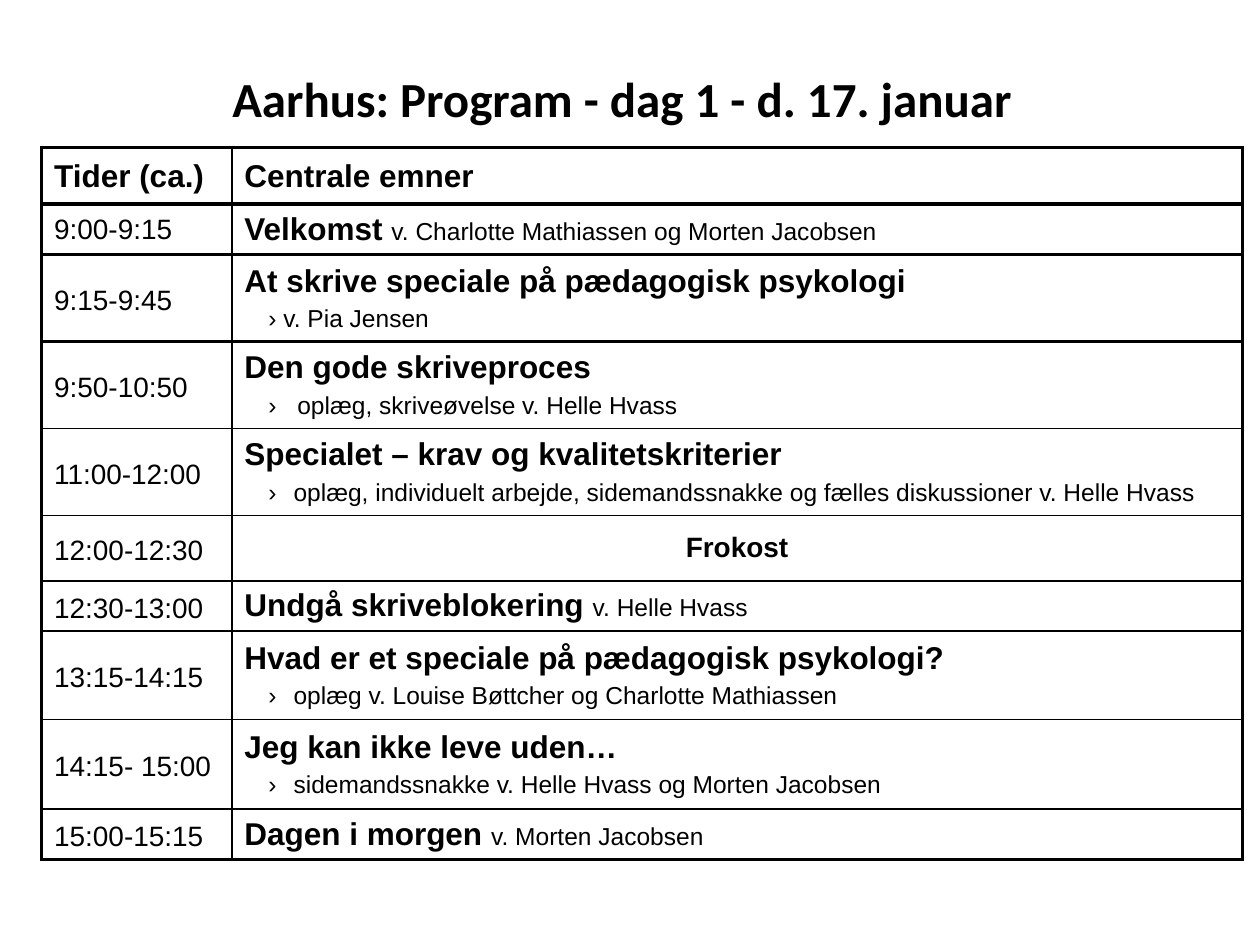
from dataclasses import dataclass

from lxml.etree import SubElement
from pptx import Presentation
from pptx.dml.color import RGBColor
from pptx.enum.text import MSO_ANCHOR, PP_ALIGN
from pptx.oxml.ns import qn
from pptx.util import Inches, Pt


@dataclass(frozen=True)
class Theme:
    ink: str = "000000"
    title_font: str = "Calibri"
    body_font: str = "Arial"
    title: int = 28
    topic: int = 18
    time: int = 16
    detail: int = 14
    thin: float = 1
    thick: float = 2.25
    time_leading: int = 21


@dataclass(frozen=True)
class Session:
    time: str
    topic: str
    height: float
    speaker: str = ""
    bullet: str = ""
    hang: float = 0.2


THEME = Theme()
BULLET_LEFT = 0.19
COLUMN_WIDTHS = (1.51, 8.02)
THICK_LINES = (0, 1, 2, 3, 10)  # horizontal rules, counted from the top
HEADER = Session("Tider (ca.)", "Centrale emner", 0.45)
SESSIONS = (
    Session("9:00-9:15", "Velkomst ", 0.4,
            speaker="v. Charlotte Mathiassen og Morten Jacobsen"),
    Session("9:15-9:45", "At skrive speciale på pædagogisk psykologi", 0.69,
            bullet="v. Pia Jensen", hang=0.12),
    Session("9:50-10:50", "Den gode skriveproces", 0.69,
            bullet="oplæg, skriveøvelse v. Helle Hvass", hang=0.23),
    Session("11:00-12:00", "Specialet – krav og kvalitetskriterier", 0.69,
            bullet="oplæg, individuelt arbejde, sidemandssnakke og fælles "
                   "diskussioner v. Helle Hvass"),
    Session("12:00-12:30", "Frokost", 0.52),
    Session("12:30-13:00", "Undgå skriveblokering ", 0.4, speaker="v. Helle Hvass"),
    Session("13:15-14:15", "Hvad er et speciale på pædagogisk psykologi?", 0.7,
            bullet="oplæg v. Louise Bøttcher og Charlotte Mathiassen"),
    Session("14:15- 15:00", "Jeg kan ikke leve uden…", 0.71,
            bullet="sidemandssnakke v. Helle Hvass og Morten Jacobsen"),
    Session("15:00-15:15", "Dagen i morgen ", 0.4, speaker="v. Morten Jacobsen"),
)


def set_values(target, values):
    for name, value in values.items():
        setattr(target, name, value)


def add_run(paragraph, text, size, bold=False, name=THEME.body_font):
    run = paragraph.add_run()
    run.text = text
    set_values(run.font, {"size": Pt(size), "bold": bold, "name": name})
    run.font.color.rgb = RGBColor.from_string(THEME.ink)


def add_bullet(paragraph, hang):
    properties = paragraph._p.get_or_add_pPr()
    properties.set("marL", str(Inches(BULLET_LEFT + hang)))
    properties.set("indent", str(-Inches(hang)))
    SubElement(properties, qn("a:buFont"), typeface=THEME.body_font)
    SubElement(properties, qn("a:buChar"), char="›")


def add_title(slide, text):
    box = slide.shapes.add_textbox(Inches(0.33), Inches(0.42), Inches(9.21), Inches(0.71))
    frame = box.text_frame
    set_values(frame, {"word_wrap": True, "vertical_anchor": MSO_ANCHOR.MIDDLE})
    paragraph = frame.paragraphs[0]
    paragraph.alignment = PP_ALIGN.CENTER
    add_run(paragraph, text, THEME.title, True, THEME.title_font)


def style_cell(cell, row, column):
    """Rule the four sides, clear the fill and centre the text vertically."""
    def rule(is_thick):
        return THEME.thick if is_thick else THEME.thin

    sides = {"L": rule(column == 0), "R": rule(column == 1),
             "T": rule(row in THICK_LINES), "B": rule(row + 1 in THICK_LINES)}
    properties = cell._tc.get_or_add_tcPr()
    for side, width in sides.items():
        line = SubElement(properties, qn(f"a:ln{side}"), w=str(Pt(width)))
        fill = SubElement(line, qn("a:solidFill"))
        SubElement(fill, qn("a:srgbClr"), val=THEME.ink)
    cell.fill.background()
    cell.vertical_anchor = MSO_ANCHOR.MIDDLE


def write_header(cells):
    for cell, text in zip(cells, (HEADER.time, HEADER.topic)):
        paragraph = cell.text_frame.paragraphs[0]
        paragraph.line_spacing = Pt(THEME.time_leading)
        add_run(paragraph, text, THEME.topic, True)


def write_session(cells, session, is_first):
    time = cells[0].text_frame.paragraphs[0]
    if not is_first:
        time.line_spacing = Pt(THEME.time_leading)
    add_run(time, session.time, THEME.time)

    frame = cells[1].text_frame
    topic = frame.paragraphs[0]
    is_break = not (session.speaker or session.bullet)
    size = THEME.time if is_break else THEME.topic
    topic.space_after = Pt(size * 0.2)
    add_run(topic, session.topic, size, True)
    if is_break:
        topic.alignment = PP_ALIGN.CENTER
    if session.speaker:
        add_run(topic, session.speaker, THEME.detail)
    if session.bullet:
        detail = frame.add_paragraph()
        add_bullet(detail, session.hang)
        detail.space_after = Pt(THEME.detail * 0.2)
        add_run(detail, session.bullet, THEME.detail)


def add_programme(slide):
    rows = (HEADER, *SESSIONS)
    table = slide.shapes.add_table(
        len(rows), len(COLUMN_WIDTHS), Inches(0.33), Inches(1.17),
        Inches(sum(COLUMN_WIDTHS)), Inches(sum(row.height for row in rows))).table
    set_values(table, {"first_row": False, "horz_banding": False})
    for column, width in zip(table.columns, COLUMN_WIDTHS):
        column.width = Inches(width)
    for index, session in enumerate(rows):
        row = table.rows[index]
        row.height = Inches(session.height)
        cells = list(row.cells)
        for column, cell in enumerate(cells):
            style_cell(cell, index, column)
        if session is HEADER:
            write_header(cells)
        else:
            write_session(cells, session, index == 1)


def main():
    presentation = Presentation()
    set_values(presentation, {"slide_width": Inches(10), "slide_height": Inches(7.5)})
    slide = presentation.slides.add_slide(presentation.slide_layouts[6])
    add_title(slide, "Aarhus: Program - dag 1 - d. 17. januar")
    add_programme(slide)
    presentation.save("out.pptx")


if __name__ == "__main__":
    main()
